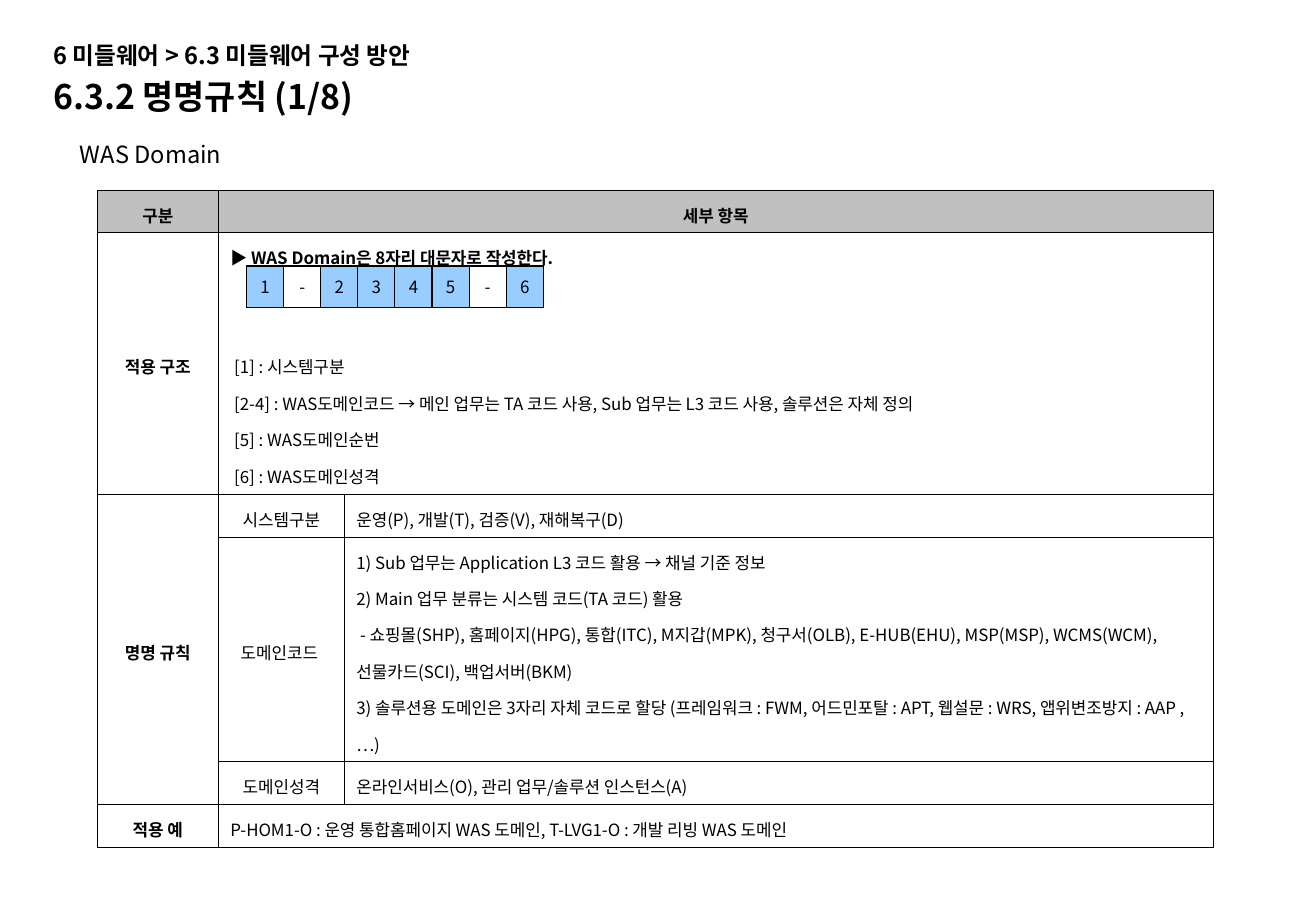
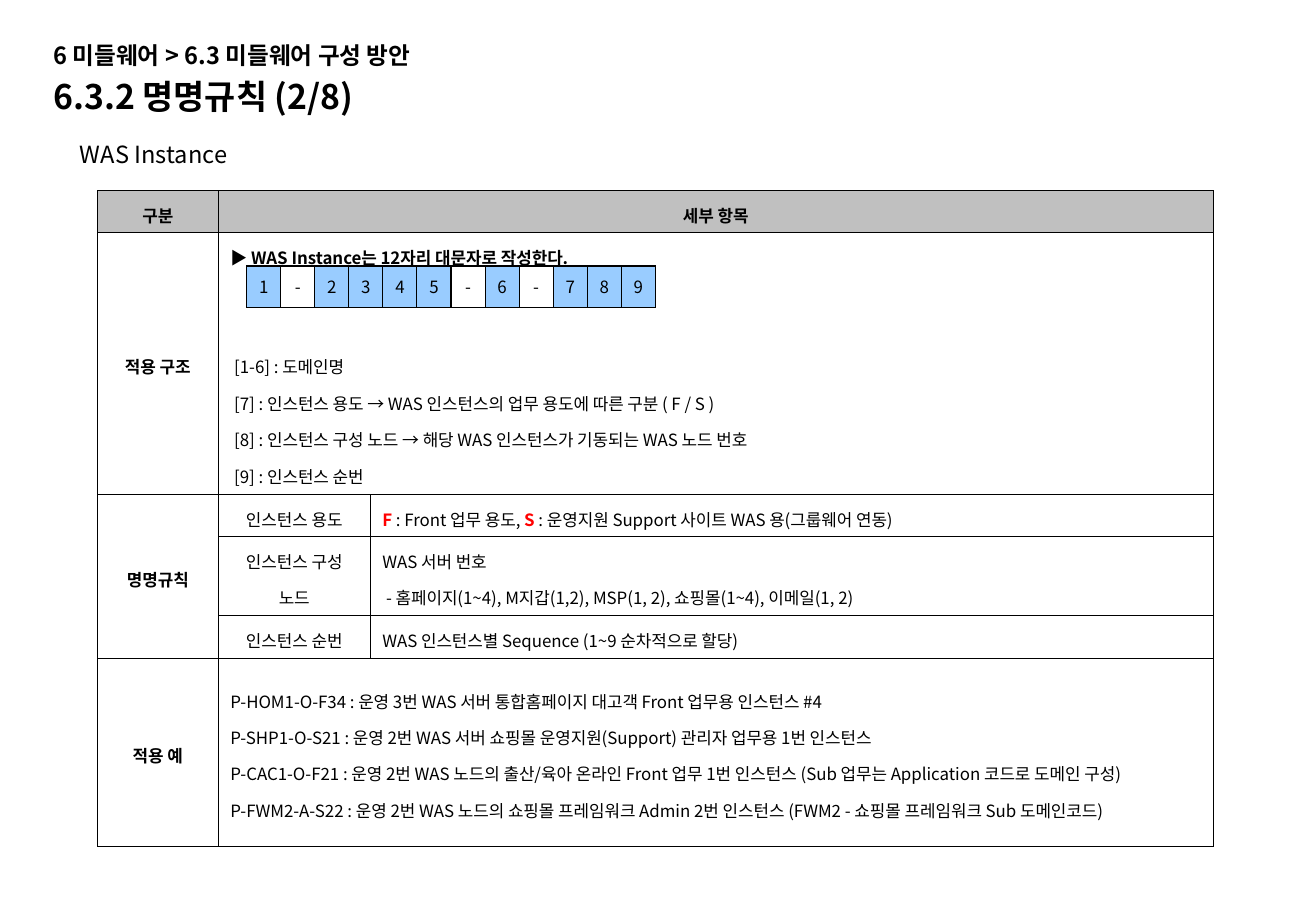
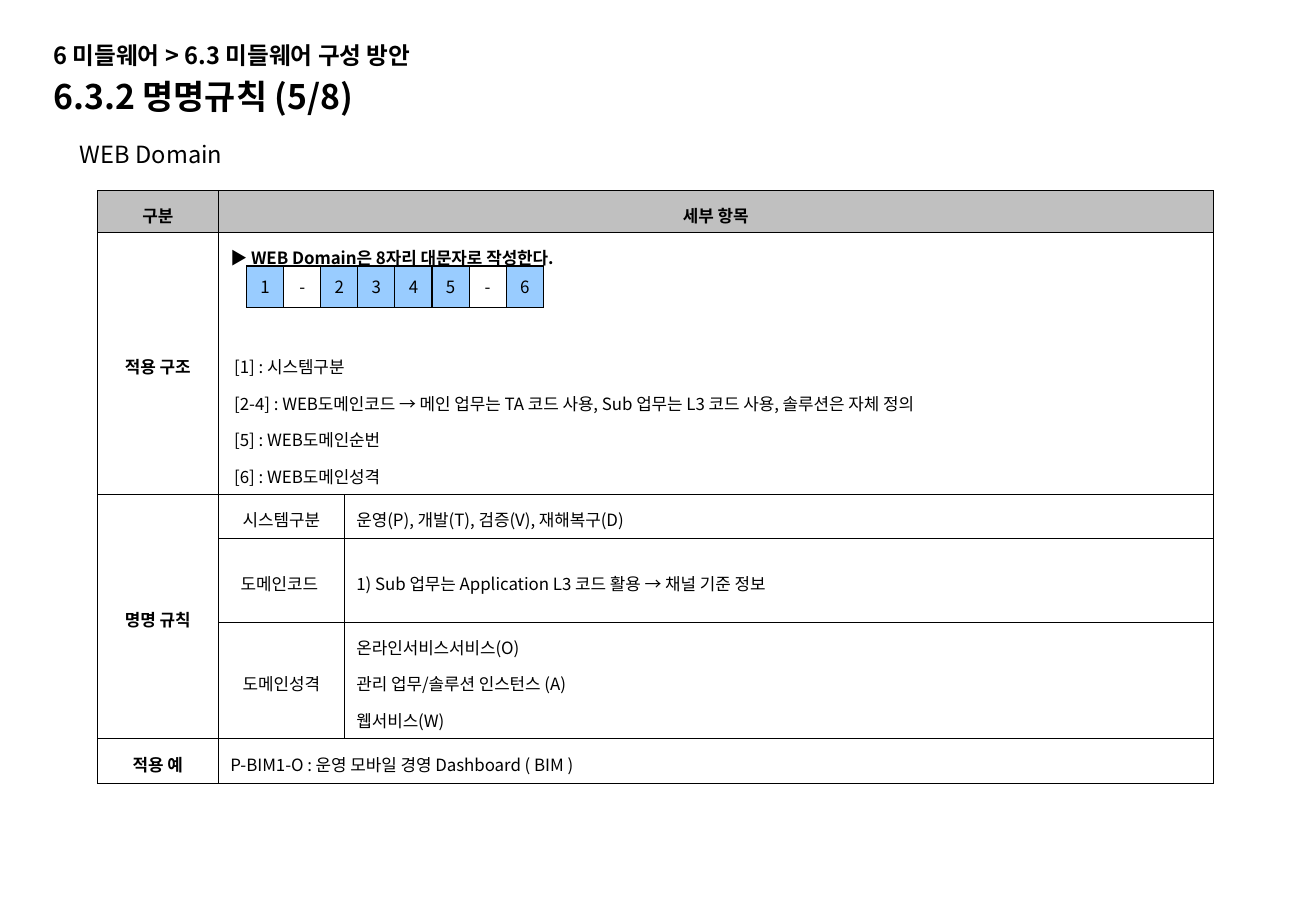
from dataclasses import dataclass
from typing import NamedTuple

from lxml import etree
from pptx import Presentation
from pptx.dml.color import RGBColor
from pptx.enum.text import MSO_ANCHOR, PP_ALIGN
from pptx.oxml.ns import qn
from pptx.util import Inches, Pt

LEFT, CENTER = PP_ALIGN.LEFT, PP_ALIGN.CENTER
TOP, MIDDLE, BOTTOM = MSO_ANCHOR.TOP, MSO_ANCHOR.MIDDLE, MSO_ANCHOR.BOTTOM
FONT = "Noto Sans CJK KR"
COLORS = {"ink": "000000", "paper": "FFFFFF", "header": "C0C0C0", "code": "99CCFF", "accent": "FF0000"}
SLIDE_WIDTH, SLIDE_HEIGHT = Inches(10.83), Inches(7.5)

TABLE_LEFT, TABLE_TOP, TABLE_WIDTH = 7.39, 20.93, 84.8
LABEL_COLUMN = 9.2
HEADER_ROW, STRUCTURE_ROW = 4.61, 28.75
STRIP_LEFT, STRIP_TOP, STRIP_HEIGHT = 18.74, 29.2, 4.53


class Span(NamedTuple):
    """A stretch of text with its own weight and colour."""
    text: str
    bold: bool = False
    color: str = "ink"


Line = str | tuple[Span, ...]


@dataclass(frozen=True)
class Rule:
    """One naming rule: item, details and row height in percent."""
    item: tuple[Line, ...]
    details: tuple[Line, ...]
    height: float


@dataclass(frozen=True)
class Page:
    """The content of one naming-convention slide."""
    number: int
    subject: str
    summary: str
    code: str
    code_column: float
    fields: tuple[str, ...]
    item_column: float
    rules_label: str
    rules: tuple[Rule, ...]
    examples: tuple[str, ...]
    example_height: float


def across(percent: float) -> int:
    """Turn a percentage of the slide's width into a length."""
    return round(SLIDE_WIDTH * percent / 100)


def down(percent: float) -> int:
    """Turn a percentage of the slide's height into a length."""
    return round(SLIDE_HEIGHT * percent / 100)


def write(para, line: Line, *, size: float = 10, bold: bool = False, align=LEFT,
          spacing: float = 1.0, before: float = 0) -> None:
    """Fill a paragraph with a line of formatted text."""
    para.alignment = align
    para.line_spacing = spacing
    if before:
        para.space_before = Pt(before)
    for span in (Span(line, bold),) if isinstance(line, str) else line:
        run = para.add_run()
        run.text = span.text
        run.font.size = Pt(size)
        run.font.bold = span.bold
        run.font.name = FONT
        run.font.color.rgb = RGBColor.from_string(COLORS[span.color])
        east_asian = etree.SubElement(run.font._element, qn("a:ea"))
        east_asian.set("typeface", FONT)


def add_box(slide, left: float, top: float, width: float, height: float, anchor):
    """Add a wrapping text box and return its text frame."""
    frame = slide.shapes.add_textbox(across(left), down(top), across(width), down(height)).text_frame
    frame.word_wrap = True
    frame.vertical_anchor = anchor
    return frame


def add_grid(slide, left: float, top: float, columns: list[float], rows: list[float], border: float):
    """Add a plain table with a black border around every cell."""
    table = slide.shapes.add_table(len(rows), len(columns), across(left), down(top),
                                   across(sum(columns)), down(sum(rows))).table
    table.first_row = table.horz_banding = False
    for column, width in zip(table.columns, columns):
        column.width = across(width)
    for row, height in zip(table.rows, rows):
        row.height = down(height)
    for cell in table.iter_cells():
        properties = cell._tc.get_or_add_tcPr()
        for side in ("a:lnL", "a:lnR", "a:lnT", "a:lnB"):
            edge = etree.SubElement(properties, qn(side), w=str(Pt(border)))
            fill = etree.SubElement(edge, qn("a:solidFill"))
            etree.SubElement(fill, qn("a:srgbClr"), val=COLORS["ink"])
        cell.fill.background()
    return table


def paint(cell, color: str) -> None:
    """Give a cell a solid fill."""
    cell.fill.solid()
    cell.fill.fore_color.rgb = RGBColor.from_string(COLORS[color])


def fill_cell(cell, lines: tuple[Line, ...], *, anchor=MIDDLE, bold: bool = False,
              align=LEFT, gap: float = 0) -> None:
    """Write lines into a table cell, with an optional gap after the first."""
    cell.vertical_anchor = anchor
    cell.margin_left = cell.margin_right = Inches(0.1)
    cell.margin_top, cell.margin_bottom = 0, Inches(0.05)
    frame = cell.text_frame
    for index, line in enumerate(lines):
        para = frame.add_paragraph() if index else frame.paragraphs[0]
        write(para, line, bold=bold, align=align, spacing=1.5, before=gap if index == 1 else 0)


def add_titles(slide, page: Page) -> None:
    """Draw the breadcrumb, the title and the subject."""
    frame = add_box(slide, 3.14, 3.73, 59.46, 9.73, BOTTOM)
    write(frame.paragraphs[0], "6 미들웨어 > 6.3 미들웨어 구성 방안", size=14, bold=True)
    write(frame.add_paragraph(), f"6.3.2 명명규칙 ({page.number}/8)", size=20, bold=True, before=4)
    subject = add_box(slide, 5.17, 14.27, 88, 8.4, TOP)
    write(subject.paragraphs[0], page.subject, size=14, spacing=1.15)


def add_rules(slide, page: Page) -> None:
    """Draw the table of structure, naming rules and examples."""
    columns = [LABEL_COLUMN, page.item_column, TABLE_WIDTH - LABEL_COLUMN - page.item_column]
    rows = [HEADER_ROW, STRUCTURE_ROW, *(rule.height for rule in page.rules), page.example_height]
    table = add_grid(slide, TABLE_LEFT, TABLE_TOP, columns, rows, 0.25)
    last = len(rows) - 1
    for row in (0, 1, last):
        table.cell(row, 1).merge(table.cell(row, 2))
    table.cell(2, 0).merge(table.cell(last - 1, 0))
    for row, label in ((0, "구분"), (1, "적용 구조"), (2, page.rules_label), (last, "적용 예")):
        fill_cell(table.cell(row, 0), (label,), bold=True, align=CENTER)
    fill_cell(table.cell(0, 1), ("세부 항목",), bold=True, align=CENTER)
    for column in range(len(columns)):
        paint(table.cell(0, column), "header")
    summary = (Span(f"▶ {page.summary}", bold=True),)
    fill_cell(table.cell(1, 1), (summary, *page.fields), anchor=TOP, gap=43.3)
    for row, rule in enumerate(page.rules, start=2):
        fill_cell(table.cell(row, 1), rule.item, align=CENTER)
        fill_cell(table.cell(row, 2), rule.details)
    fill_cell(table.cell(last, 1), page.examples)


def add_code_strip(slide, page: Page) -> None:
    """Draw the row of numbered code positions."""
    strip = add_grid(slide, STRIP_LEFT, STRIP_TOP, [page.code_column] * len(page.code), [STRIP_HEIGHT], 0.75)
    for cell, mark in zip(strip.iter_cells(), page.code):
        cell.vertical_anchor = MIDDLE
        cell.margin_left = cell.margin_right = 0
        paint(cell, "paper" if mark == "-" else "code")
        write(cell.text_frame.paragraphs[0], mark, align=CENTER)


def domain_page(kind: str, number: int, rules: tuple[Rule, ...], example: str, example_height: float) -> Page:
    """Describe a domain slide for one kind of server."""
    return Page(
        number, f"{kind} Domain", f"{kind} Domain은 8자리 대문자로 작성한다.", "1-2345-6", 2.82,
        (" [1] : 시스템구분",
         f" [2-4] : {kind}도메인코드 → 메인 업무는 TA 코드 사용, Sub 업무는 L3 코드 사용, 솔루션은 자체 정의",
         f" [5] : {kind}도메인순번",
         f" [6] : {kind}도메인성격"),
        9.57, "명명 규칙", rules, (example,), example_height)


SYSTEM_ITEM, CODE_ITEM, NATURE_ITEM = ("시스템구분",), ("도메인코드 ",), ("도메인성격",)
SYSTEMS = ("운영(P), 개발(T), 검증(V), 재해복구(D)",)
SUB_CODE = "1) Sub 업무는 Application L3 코드 활용 → 채널 기준 정보"

PAGES = (
    domain_page(
        "WAS", 1,
        (Rule(SYSTEM_ITEM, SYSTEMS, 4.72),
         Rule(CODE_ITEM, (
             SUB_CODE,
             "2) Main 업무 분류는 시스템 코드(TA 코드) 활용",
             " - 쇼핑몰(SHP), 홈페이지(HPG), 통합(ITC), M지갑(MPK), 청구서(OLB), E-HUB(EHU), MSP(MSP), "
             "WCMS(WCM), 선물카드(SCI), 백업서버(BKM)",
             "3) 솔루션용 도메인은 3자리 자체 코드로 할당 (프레임워크 : FWM, 어드민포탈 : APT, "
             "웹설문 : WRS, 앱위변조방지 : AAP , …)"), 24.58),
         Rule(NATURE_ITEM, ("온라인서비스(O), 관리 업무/솔루션 인스턴스(A)",), 4.72)),
        "P-HOM1-O : 운영 통합홈페이지 WAS 도메인, T-LVG1-O : 개발 리빙 WAS 도메인", 4.72),
    Page(
        2, "WAS Instance", "WAS Instance는 12자리 대문자로 작성한다.", "1-2345-6-789", 2.59,
        (" [1-6] : 도메인명",
         " [7] : 인스턴스 용도 → WAS 인스턴스의 업무 용도에 따른 구분 ( F / S )",
         " [8] : 인스턴스 구성 노드 → 해당 WAS 인스턴스가 기동되는 WAS 노드 번호",
         " [9] : 인스턴스 순번"),
        11.54, "명명규칙",
        (Rule(("인스턴스 용도",), ((
            Span("F", True, "accent"), Span(" : Front 업무 용도, "),
            Span("S", True, "accent"), Span(" : 운영지원 Support 사이트 WAS 용(그룹웨어 연동)")),), 4.61),
         Rule(("인스턴스 구성", "노드"), (
             "WAS 서버 번호",
             " - 홈페이지(1~4), M지갑(1,2), MSP(1, 2), 쇼핑몰(1~4), 이메일(1, 2)"), 8.67),
         Rule(("인스턴스 순번",), ("WAS 인스턴스별 Sequence (1~9 순차적으로 할당)",), 4.72)),
        ("P-HOM1-O-F34 : 운영 3번 WAS 서버 통합홈페이지 대고객 Front 업무용 인스턴스 #4",
         "P-SHP1-O-S21 : 운영 2번 WAS 서버 쇼핑몰 운영지원(Support) 관리자 업무용 1번 인스턴스",
         "P-CAC1-O-F21 : 운영 2번 WAS 노드의 출산/육아 온라인 Front 업무 1번 인스턴스 "
         "(Sub 업무는 Application 코드로 도메인 구성)",
         "P-FWM2-A-S22 : 운영 2번 WAS 노드의 쇼핑몰 프레임워크 Admin 2번 인스턴스 "
         "(FWM2 - 쇼핑몰 프레임워크 Sub 도메인코드)"),
        20.63),
    domain_page(
        "WEB", 5,
        (Rule(SYSTEM_ITEM, SYSTEMS, 4.83),
         Rule(CODE_ITEM, (SUB_CODE,), 9.22),
         Rule(NATURE_ITEM, ("온라인서비스서비스(O)", "관리 업무/솔루션 인스턴스 (A)", "웹서비스(W)"), 12.73)),
        "P-BIM1-O : 운영 모바일 경영 Dashboard ( BIM )", 4.94),
)


def main() -> None:
    """Build the deck and save it."""
    deck = Presentation()
    deck.slide_width, deck.slide_height = SLIDE_WIDTH, SLIDE_HEIGHT
    for page in PAGES:
        slide = deck.slides.add_slide(deck.slide_layouts[6])
        add_titles(slide, page)
        add_rules(slide, page)
        add_code_strip(slide, page)
    deck.save("out.pptx")


if __name__ == "__main__":
    main()
